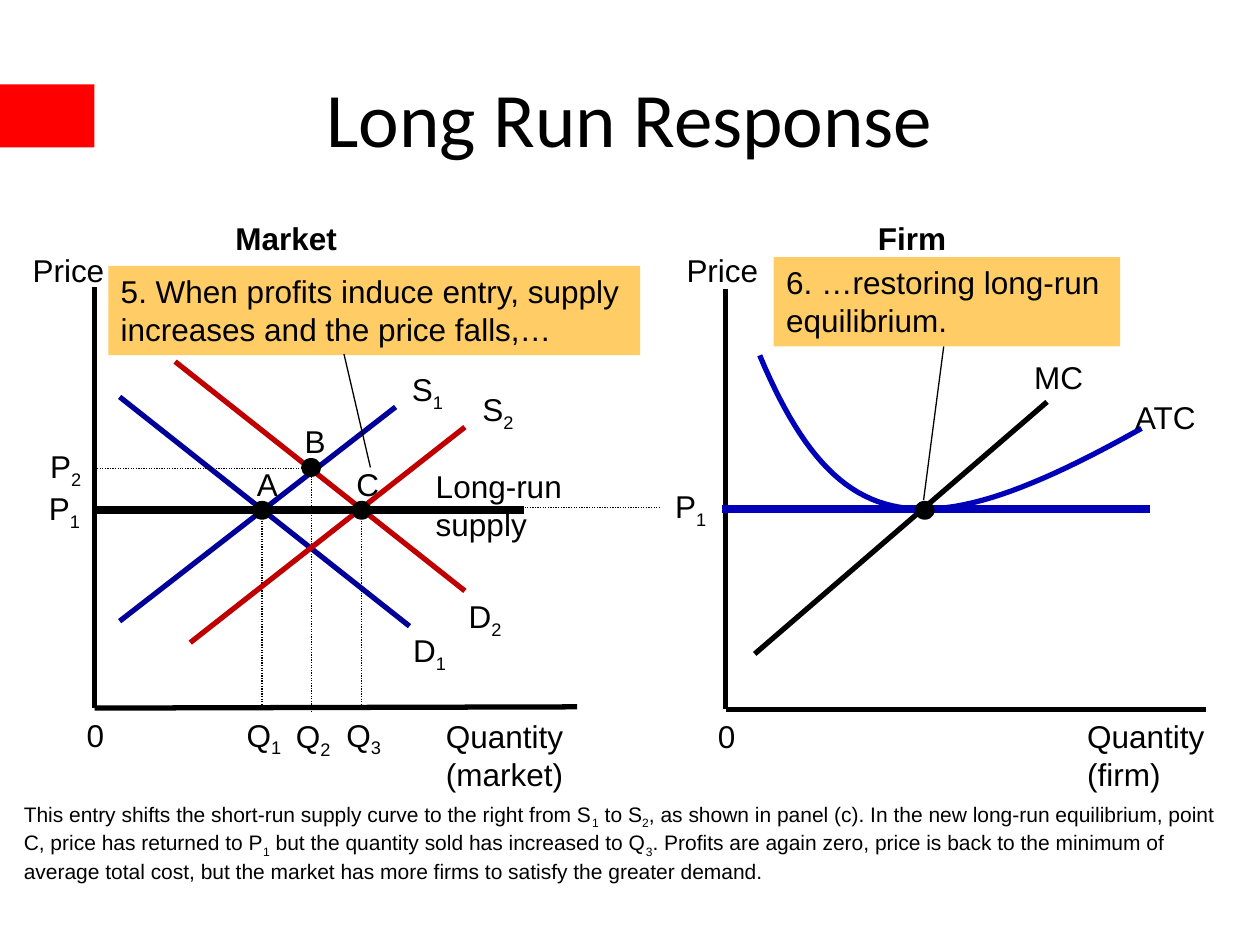
from typing import NamedTuple

from lxml import etree
from pptx import Presentation
from pptx import util as u
from pptx.dml.color import RGBColor
from pptx.enum import dml, shapes, text
from pptx.oxml.ns import qn

BLACK = RGBColor(0x00, 0x00, 0x00)
WHITE = RGBColor(0xFF, 0xFF, 0xFF)
RED = RGBColor(0xFF, 0x00, 0x00)
NAVY = RGBColor(0x00, 0x00, 0x99)
BLUE = RGBColor(0x00, 0x00, 0xB8)
CRIMSON = RGBColor(0xC0, 0x00, 0x00)
AMBER = RGBColor(0xFF, 0xCC, 0x66)

CM_PER_UNIT = 2.54
LABEL_H = 0.4
PRICE_Y = 4.05


class Box(NamedTuple):
    x: float
    y: float
    w: float
    h: float = LABEL_H


class Label(NamedTuple):
    words: str
    box: Box
    bold: bool = False
    wrap: bool = False


class Line(NamedTuple):
    x1: float
    y1: float
    x2: float
    y2: float
    color: RGBColor = BLACK
    width: float = 3
    dotted: bool = False


class Panel(NamedTuple):
    x: float
    top: float
    bottom: float
    right: float
    right_y: float
    price_x: float
    quantity: Label


class Callout(NamedTuple):
    words: str
    box: Box
    leader: Line


def cm(units: float) -> u.Cm:
    return u.Cm(units * CM_PER_UNIT)


def place(box: Box) -> list[u.Cm]:
    return [cm(v) for v in box]


def write(tf, words: str, *, size: float = 18, font: str = "Arial", bold: bool = False,
          wrap: bool = False, align=text.PP_ALIGN.LEFT, anchor=text.MSO_ANCHOR.TOP,
          fit=text.MSO_AUTO_SIZE.SHAPE_TO_FIT_TEXT) -> None:
    tf.word_wrap = wrap
    tf.auto_size = fit
    tf.vertical_anchor = anchor
    for i, row in enumerate(words.split("\n")):
        p = tf.add_paragraph() if i else tf.paragraphs[0]
        p.alignment = align
        for j, part in enumerate(row.split("~")):
            if not part:
                continue
            r = p.add_run()
            r.text = part
            r.font.size, r.font.name, r.font.bold = u.Pt(size), font, bold
            r.font.color.rgb = BLACK
            if j % 2:
                r.font._element.set("baseline", "-25000")


def add_label(s, label: Label, **fmt) -> None:
    sp = s.shapes.add_textbox(*place(label.box))
    write(sp.text_frame, label.words, bold=label.bold, wrap=label.wrap, **fmt)


def add_line(s, line: Line) -> None:
    ends = [cm(v) for v in line[:4]]
    c = s.shapes.add_connector(shapes.MSO_CONNECTOR.STRAIGHT, *ends)
    c.line.color.rgb = line.color
    c.line.width = u.Pt(line.width)
    if line.dotted:
        c.line.dash_style = dml.MSO_LINE.ROUND_DOT
    etree.SubElement(c._element.spPr, qn("a:effectLst"))


def add_solid(s, box: Box, color: RGBColor, kind=shapes.MSO_SHAPE.RECTANGLE):
    sp = s.shapes.add_shape(kind, *place(box))
    sp.shadow.inherit = False
    sp.fill.solid()
    sp.fill.fore_color.rgb = color
    sp.line.fill.background()
    return sp


def add_panel(s, panel: Panel) -> None:
    add_solid(s, Box(panel.x + 0.01, panel.top + 0.04, 3.8, 3.29), WHITE)
    add_line(s, Line(panel.x, panel.top, panel.x, panel.bottom))
    add_line(s, Line(panel.x, panel.bottom, panel.right, panel.right_y))
    add_label(s, Label("Price", Box(panel.price_x, 1.94, 0.78)))
    add_label(s, Label("0", Box(panel.x - 0.16, panel.bottom + 0.01, 0.34)))
    add_label(s, panel.quantity)


def add_callout(s, callout: Callout) -> None:
    sp = add_solid(s, callout.box, AMBER)
    write(sp.text_frame, callout.words, wrap=True)
    add_line(s, callout.leader)


def add_dot(s, x: float, y: float) -> None:
    add_solid(s, Box(x - 0.08, y - 0.075, 0.16, 0.15), BLACK, shapes.MSO_SHAPE.OVAL)


def add_bezier(s, points: list[tuple[float, float]], color: RGBColor, steps: int = 48) -> None:
    curve = []
    for i in range(steps + 1):
        t = i / steps
        weights = ((1 - t) ** 3, 3 * t * (1 - t) ** 2, 3 * t * t * (1 - t), t ** 3)
        curve.append(tuple(cm(sum(w * v for w, v in zip(weights, axis)))
                           for axis in zip(*points)))
    fb = s.shapes.build_freeform(*curve[0])
    fb.add_line_segments(curve[1:], close=False)
    sp = fb.convert_to_shape()
    sp.shadow.inherit = False
    sp.fill.background()
    sp.line.color.rgb = color
    sp.line.width = u.Pt(3)


PANELS = [
    Panel(5.76, 2.29, 5.63, 9.57, 5.63, 5.35, Label("Quantity\n(firm)", Box(8.53, 5.64, 1.14, 0.77))),
    Panel(0.75, 2.28, 5.62, 4.58, 5.61, 0.16, Label("Quantity\n(market)", Box(3.44, 5.64, 1.21, 0.77))),
]
CURVES = [
    Line(0.95, 4.93, 3.14, 3.23, NAVY),
    Line(0.95, 3.15, 3.25, 4.97, NAVY),
    Line(1.39, 2.87, 3.69, 4.69, CRIMSON),
    Line(5.99, 5.19, 8.31, 3.19),
]
GUIDES = [
    Line(2.08, PRICE_Y, 2.08, 5.64, width=0.75, dotted=True),
    Line(2.47, 3.76, 2.47, 5.66, width=0.75, dotted=True),
    Line(2.87, PRICE_Y, 2.87, 5.64, width=0.75, dotted=True),
    Line(0.77, 3.72, 2.47, 3.72, width=0.75, dotted=True),
    Line(3.59, 4.03, 5.24, 4.03, width=0.75, dotted=True),
]
SUPPLY_2 = Line(1.51, 5.1, 3.69, 3.39, CRIMSON)
PRICE_LINES = [
    Line(5.73, 4.04, 9.13, 4.04, BLUE, 4.5),
    Line(0.76, PRICE_Y, 4.16, PRICE_Y, BLACK, 4.5),
]
ATC = [(6.03, 2.82), (6.65, 4.3), (7.35, 4.36), (9.06, 3.4)]
DOTS = [(2.08, PRICE_Y), (2.47, 3.71), (2.87, PRICE_Y), (7.34, PRICE_Y)]
CALLOUTS = [
    Callout("5. When profits induce entry, supply increases and the price falls,…",
            Box(0.86, 2.11, 4.22, 0.71), Line(2.94, 3.71, 2.73, 2.81, width=0.75)),
    Callout("6. …restoring long-run equilibrium.",
            Box(6.14, 2.04, 2.75, 0.71), Line(7.33, 3.97, 7.49, 2.75, width=0.75)),
]
LABELS = [
    Label("Market", Box(1.77, 1.69, 1.24), bold=True, wrap=True),
    Label("Firm", Box(6.87, 1.69, 0.84), bold=True, wrap=True),
    Label("S~1~", Box(3.17, 2.89, 0.46)),
    Label("S~2~", Box(3.73, 3.05, 0.46)),
    Label("D~1~", Box(3.18, 4.96, 0.48)),
    Label("D~2~", Box(3.62, 4.69, 0.48)),
    Label("Q~1~", Box(1.86, 5.63, 0.49)),
    Label("Q~2~", Box(2.25, 5.64, 0.49)),
    Label("Q~3~", Box(2.65, 5.63, 0.49)),
    Label("P~2~", Box(0.3, 3.5, 0.46)),
    Label("P~1~", Box(0.29, 3.83, 0.46)),
    Label("P~1~", Box(5.26, 3.82, 0.46)),
    Label("A", Box(1.94, 3.64, 0.37)),
    Label("B", Box(2.32, 3.3, 0.37)),
    Label("C", Box(2.73, 3.64, 0.38)),
    Label("MC", Box(8.11, 2.79, 0.59)),
    Label("ATC", Box(8.91, 3.11, 0.69)),
    Label("Long-run\nsupply", Box(3.36, 3.66, 1.21, 0.77)),
]
TITLE = Label("Long Run Response", Box(0.5, 0.3, 9, 1.25), wrap=True)
CAPTION = Label(
    "This entry shifts the short-run supply curve to the right from S~1~ to S~2~, as shown in "
    "panel (c). In the new long-run equilibrium, point C, price has returned to P~1~ but the "
    "quantity sold has increased to Q~3~. Profits are again zero, price is back to the minimum "
    "of average total cost, but the market has more firms to satisfy the greater demand.",
    Box(0.09, 6.31, 9.82, 0.71), wrap=True)


def main() -> None:
    prs = Presentation()
    prs.slide_width, prs.slide_height = cm(10), cm(7.5)
    s = prs.slides.add_slide(prs.slide_layouts[6])
    add_solid(s, Box(0, 0.67, 0.75, 0.5), RED)
    add_label(s, TITLE, size=44, font="Calibri", align=text.PP_ALIGN.CENTER,
              anchor=text.MSO_ANCHOR.MIDDLE, fit=text.MSO_AUTO_SIZE.NONE)
    for panel in PANELS:
        add_panel(s, panel)
    add_label(s, CAPTION, size=12)
    for line in CURVES + GUIDES:
        add_line(s, line)
    add_bezier(s, ATC, BLUE)
    for callout in CALLOUTS:
        add_callout(s, callout)
    for line in [SUPPLY_2] + PRICE_LINES:
        add_line(s, line)
    for dot in DOTS:
        add_dot(s, *dot)
    for label in LABELS:
        add_label(s, label)
    prs.save("out.pptx")


if __name__ == "__main__":
    main()
